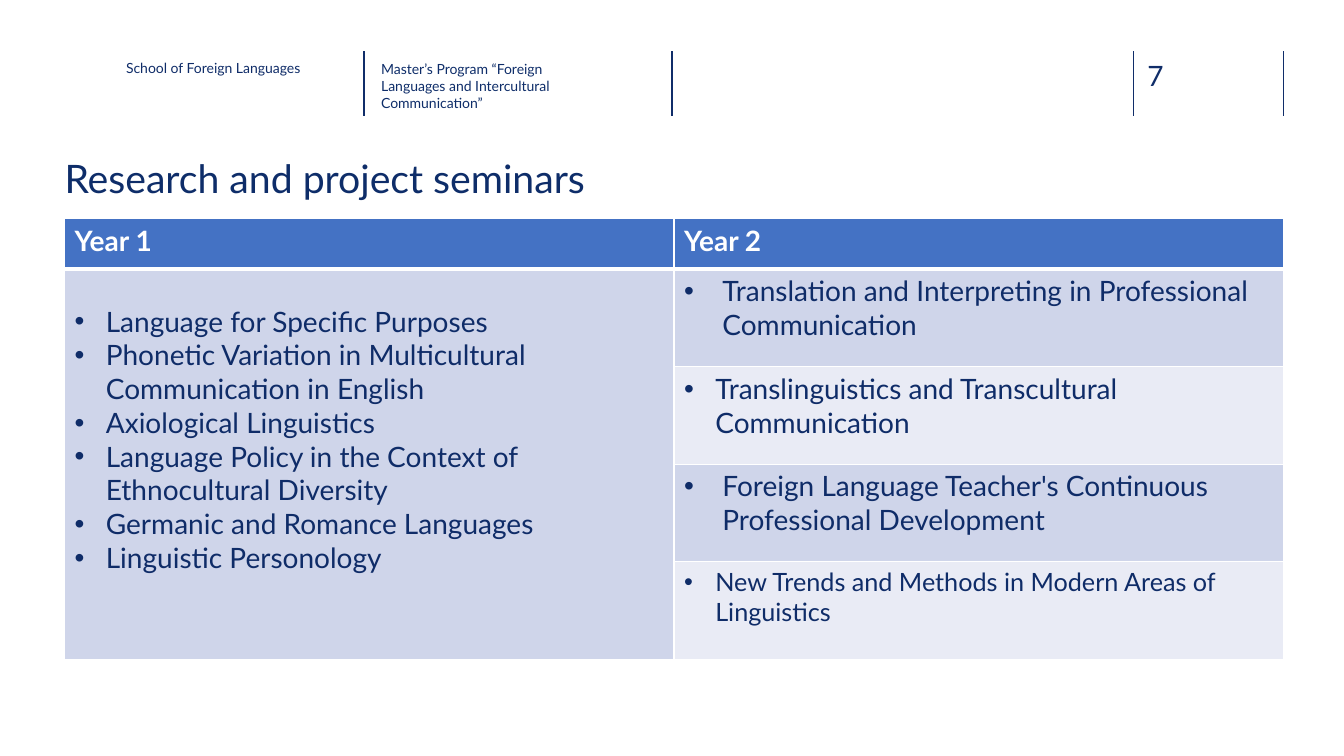
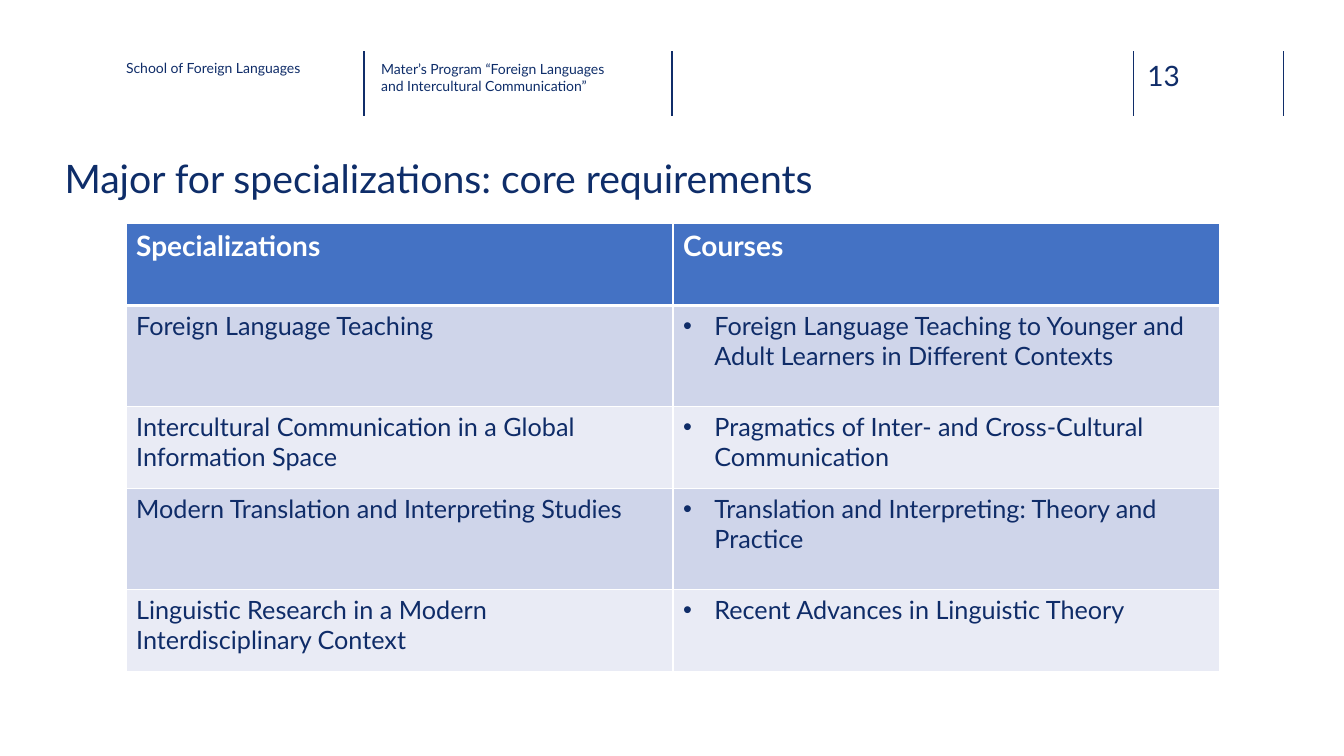
from dataclasses import dataclass

from lxml import etree
from pptx import Presentation
from pptx import util as u
from pptx.dml import color
from pptx.enum import shapes, text
from pptx.oxml import ns

FONT = "Lato"
WHITE, RULE, TITLE, BODY = "FFFFFF", "102D69", "0E2D69", "0F2C68"
HEAD_FILL, BANDS = "4472C4", ("CFD5EA", "E9EBF5")
SLIDE_W, SLIDE_H = u.Inches(13.33), u.Inches(7.5)
RULE_COLUMNS = (27.08, 50, 84.32, 95.5)
RULE_TOP, RULE_BOTTOM = 6.8, 15.33


@dataclass(frozen=True)
class Box:
    left: float
    top: float
    width: float
    height: float

    def emu(self) -> tuple[int, int, int, int]:
        return across(self.left), down(self.top), across(self.width), down(self.height)


@dataclass(frozen=True)
class Style:
    size: float
    color: str
    bold: bool = False


@dataclass(frozen=True)
class Entry:
    lines: tuple[str, ...]
    size: float = 18
    indent: float = 0
    pad_top: float = 0.05
    row_span: int = 1


@dataclass(frozen=True)
class Grid:
    box: Box
    row_heights: tuple[float, ...]
    headings: tuple[str, ...]
    rows: tuple[tuple[Entry | None, ...], ...]


@dataclass(frozen=True)
class Page:
    number: str
    program: str
    title: str
    grid: Grid


TITLE_BOX = Box(4.8, 21.07, 90.7, 6)
SCHOOL_BOX = Box(9.38, 7.87, 15.6, 6)
PROGRAM_BOX = Box(28.36, 8, 16.95, 6)
NUMBER_BOX = Box(85.37, 7.73, 5.48, 4.53)


def across(percent: float) -> int:
    return round(SLIDE_W * percent / 100)


def down(percent: float) -> int:
    return round(SLIDE_H * percent / 100)


def rgb(value: str) -> color.RGBColor:
    return color.RGBColor.from_string(value)


def add_run(p, content: str, style: Style) -> None:
    r = p.add_run()
    r.text = content
    r.font.name = FONT
    r.font.size = u.Pt(style.size)
    r.font.bold = style.bold
    r.font.color.rgb = rgb(style.color)


def fill_frame(sp, content: str, style: Style):
    tf = sp.text_frame
    tf.margin_left = tf.margin_top = tf.margin_right = tf.margin_bottom = 0
    tf.word_wrap = True
    tf.auto_size = text.MSO_AUTO_SIZE.NONE
    tf.vertical_anchor = text.MSO_ANCHOR.TOP
    p = tf.paragraphs[0]
    p.alignment = text.PP_ALIGN.LEFT
    add_run(p, content, style)
    return p


def add_label(s, box: Box, content: str, style: Style) -> None:
    fill_frame(s.shapes.add_textbox(*box.emu()), content, style)


def add_title(s, content: str) -> None:
    sp = s.shapes.title
    sp.left, sp.top, sp.width, sp.height = TITLE_BOX.emu()
    p = fill_frame(sp, content, Style(28, TITLE))
    p.line_spacing = 0.9


def add_rule(s, column: float) -> None:
    x = across(column)
    sp = s.shapes.add_connector(
        shapes.MSO_CONNECTOR.STRAIGHT, x, down(RULE_TOP), x, down(RULE_BOTTOM)
    )
    sp.line.color.rgb = rgb(RULE)
    sp.line.width = u.Pt(1)
    etree.SubElement(sp._element.spPr, ns.qn("a:effectLst"))


def add_header(s, page: Page) -> None:
    for column in RULE_COLUMNS:
        add_rule(s, column)
    add_label(s, SCHOOL_BOX, "School of Foreign Languages", Style(10, BODY))
    add_label(s, PROGRAM_BOX, page.program, Style(10, TITLE))
    add_label(s, NUMBER_BOX, page.number, Style(20, RULE))


def set_bullet(p, indent: float) -> None:
    pPr = p._p.get_or_add_pPr()
    pPr.set("marL", str(u.Inches(indent)))
    pPr.set("indent", str(-u.Inches(indent)))
    etree.SubElement(pPr, ns.qn("a:buFont"), typeface="Arial")
    etree.SubElement(pPr, ns.qn("a:buChar"), char="•")


def paint_cell(cell, row: int) -> None:
    tcPr = cell._tc.get_or_add_tcPr()
    widths = {"L": 1, "R": 1, "T": 3 if row == 1 else 1, "B": 3 if row == 0 else 1}
    for side, width in widths.items():
        ln = etree.SubElement(tcPr, ns.qn(f"a:ln{side}"), w=str(u.Pt(width)))
        solid = etree.SubElement(ln, ns.qn("a:solidFill"))
        etree.SubElement(solid, ns.qn("a:srgbClr"), val=WHITE)
    cell.fill.solid()
    cell.fill.fore_color.rgb = rgb(BANDS[(row - 1) % 2] if row else HEAD_FILL)


def write_entry(cell, entry: Entry, style: Style) -> None:
    cell.margin_top = u.Inches(entry.pad_top)
    tf = cell.text_frame
    for i, line in enumerate(entry.lines):
        p = tf.add_paragraph() if i else tf.paragraphs[0]
        if entry.indent:
            set_bullet(p, entry.indent)
        add_run(p, line, style)


def add_grid(s, grid: Grid) -> None:
    columns = len(grid.headings)
    table = s.shapes.add_table(len(grid.row_heights), columns, *grid.box.emu()).table
    for column in table.columns:
        column.width = across(grid.box.width / columns)
    for row, height in zip(table.rows, grid.row_heights):
        row.height = down(height)
    headings = tuple(Entry((name,), 20) for name in grid.headings)
    for i, entries in enumerate((headings, *grid.rows)):
        for j, entry in enumerate(entries):
            cell = table.cell(i, j)
            paint_cell(cell, i)
            if entry is None:
                continue
            if entry.row_span > 1:
                cell.merge(table.cell(i + entry.row_span - 1, j))
            ink = BODY if i else WHITE
            write_entry(cell, entry, Style(entry.size, ink, i == 0))


def bullet(line: str, size: float = 18, indent: float = 0.31) -> Entry:
    return Entry((line,), size, indent)


SEMINARS = Grid(
    Box(4.8, 28.93, 90.7, 58.27),
    (6.67, 12.9, 12.9, 12.9, 12.9),
    ("Year 1", "Year 2"),
    (
        (
            Entry(
                (
                    "Language for Specific Purposes",
                    "Phonetic Variation in Multicultural Communication in English",
                    "Axiological Linguistics",
                    "Language Policy in the Context of Ethnocultural Diversity",
                    "Germanic and Romance Languages",
                    "Linguistic Personology",
                ),
                size=20,
                indent=0.31,
                pad_top=0.35,
                row_span=4,
            ),
            bullet("Translation and Interpreting in Professional Communication", 20, 0.38),
        ),
        (None, bullet("Translinguistics and Transcultural Communication", 20)),
        (
            None,
            bullet("Foreign Language Teacher's Continuous Professional Development", 20, 0.38),
        ),
        (None, bullet("New Trends and Methods in Modern Areas of Linguistics")),
    ),
)

REQUIREMENTS = Grid(
    Box(9.38, 29.6, 81.4, 59),
    (10.8, 13.4, 10.8, 13.4, 10.8),
    ("Specializations", "Courses"),
    tuple(
        (Entry((field,)), bullet(course))
        for field, course in (
            (
                "Foreign Language Teaching",
                "Foreign Language Teaching to Younger and Adult Learners in Different Contexts",
            ),
            (
                "Intercultural Communication in a Global Information Space",
                "Pragmatics of Inter- and Cross-Cultural Communication",
            ),
            (
                "Modern Translation and Interpreting Studies",
                "Translation and Interpreting: Theory and Practice",
            ),
            (
                "Linguistic Research in a Modern Interdisciplinary Context",
                "Recent Advances in Linguistic Theory",
            ),
        )
    ),
)

PAGES = (
    Page(
        "7",
        "Master’s Program “Foreign Languages and Intercultural Communication”",
        "Research and project seminars",
        SEMINARS,
    ),
    Page(
        "13",
        "Mater’s Program “Foreign Languages and Intercultural Communication”",
        "Major for specializations: core requirements",
        REQUIREMENTS,
    ),
)


def main() -> None:
    prs = Presentation()
    prs.slide_width, prs.slide_height = SLIDE_W, SLIDE_H
    title_only = prs.slide_layouts.get_by_name("Title Only")
    for page in PAGES:
        s = prs.slides.add_slide(title_only)
        add_header(s, page)
        add_title(s, page.title)
        add_grid(s, page.grid)
    prs.save("out.pptx")


if __name__ == "__main__":
    main()
